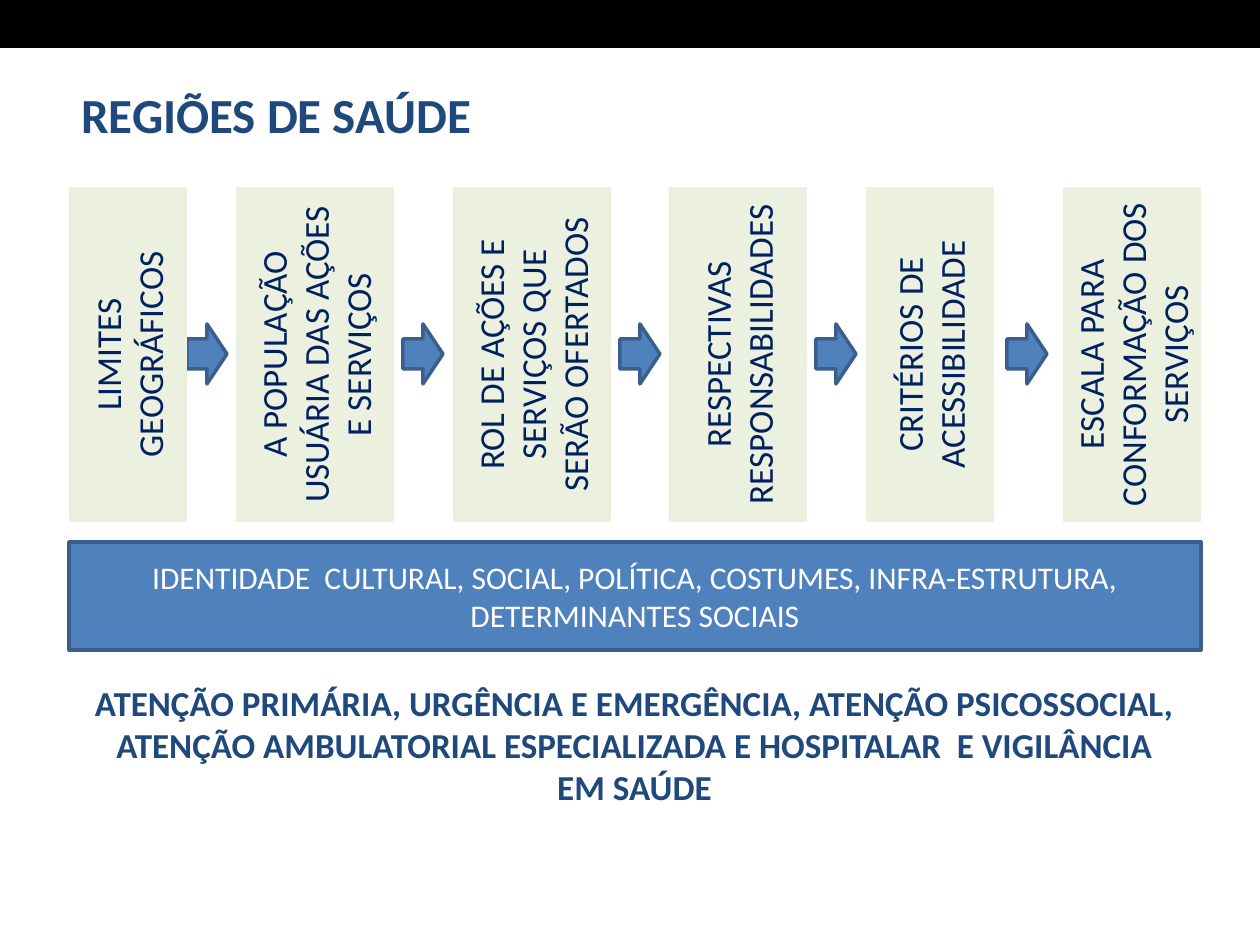
from pptx import Presentation
from pptx.dml.color import RGBColor
from pptx.enum.shapes import MSO_SHAPE as Shape
from pptx.enum.text import MSO_ANCHOR as Anchor, MSO_AUTO_SIZE as Fit, PP_ALIGN as Align
from pptx.util import Inches, Pt

BLACK = RGBColor(0x00, 0x00, 0x00)
WHITE = RGBColor(0xFF, 0xFF, 0xFF)
GREEN = RGBColor(0xEB, 0xF1, 0xDE)
BLUE = RGBColor(0x4F, 0x81, 0xBD)
EDGE = RGBColor(0x3A, 0x5F, 0x8C)
NAVY = RGBColor(0x00, 0x20, 0x60)
TITLE = RGBColor(0x1F, 0x49, 0x7D)

HEAD = "REGIÕES DE SAÚDE"
STEPS = [  # left, width, text
    (69, 118, "LIMITES GEOGRÁFICOS"),
    (236, 158, "A POPULAÇÃO USUÁRIA DAS AÇÕES E SERVIÇOS"),
    (453, 158, "ROL DE AÇÕES E SERVIÇOS QUE SERÃO OFERTADOS"),
    (669, 138, "RESPECTIVAS RESPONSABILIDADES"),
    (866, 128, "CRITÉRIOS DE ACESSIBILIDADE"),
    (1063, 138, "ESCALA PARA CONFORMAÇÃO DOS SERVIÇOS"),
]
ARROWS = [187, 403, 620, 816, 1007]
BASE = ("IDENTIDADE  CULTURAL, SOCIAL, POLÍTICA, COSTUMES, INFRA-ESTRUTURA, "
        "DETERMINANTES SOCIAIS")
CARE = ("ATENÇÃO PRIMÁRIA, URGÊNCIA E EMERGÊNCIA, ATENÇÃO PSICOSSOCIAL, "
        "ATENÇÃO AMBULATORIAL ESPECIALIZADA E HOSPITALAR  E VIGILÂNCIA EM SAÚDE")

LEFT, TOP, TALL = 69, 187, 335
SPAN = STEPS[-1][0] + STEPS[-1][1] - LEFT
ARROW_W, ARROW_H = 40, 60


def px(*vals):
    return [Inches(v / 126) for v in vals]


def write(shape, text, size, color, bold=False, align=Align.CENTER):
    frame = shape.text_frame
    frame.word_wrap = True
    frame.text = text
    par = frame.paragraphs[0]
    par.alignment = align
    font = par.runs[0].font
    font.name, font.size, font.bold = "Calibri", Pt(size), bold
    font.color.rgb = color
    return frame


def draw(kind, box, fill, line=None):
    shape = slide.shapes.add_shape(kind, *px(*box))
    shape.shadow.inherit = False
    shape.fill.solid()
    shape.fill.fore_color.rgb = fill
    if line is None:
        shape.line.fill.background()
    else:
        shape.line.color.rgb = line
        shape.line.width = Pt(2)
    return shape


def label(box, *style, **more):
    frame = write(slide.shapes.add_textbox(*px(*box)), *style, **more)
    frame.auto_size = Fit.SHAPE_TO_FIT_TEXT


deck = Presentation()
deck.slide_width, deck.slide_height = px(1260, 945)
slide = deck.slides.add_slide(deck.slide_layouts[6])

draw(Shape.RECTANGLE, (0, 0, 1260, 46), BLACK, BLACK)
label((LEFT, 78, 1152, 72), HEAD, 28, TITLE, bold=True, align=Align.JUSTIFY)

for x in ARROWS:
    y = TOP + (TALL - ARROW_H) // 2
    draw(Shape.RIGHT_ARROW, (x, y, ARROW_W, ARROW_H), BLUE, EDGE)

for x, wide, text in STEPS:
    step = draw(Shape.RECTANGLE, (x, TOP, wide, TALL), GREEN)
    frame = write(step, text, 20, NAVY)
    frame.vertical_anchor = Anchor.MIDDLE
    frame._txBody.bodyPr.set("vert", "vert270")

base = draw(Shape.RECTANGLE, (LEFT, 542, SPAN, 108), BLUE, EDGE)
write(base, BASE, 18, WHITE).vertical_anchor = Anchor.MIDDLE
label((78, 675, 1113, 140), CARE, 20, TITLE, bold=True)

deck.save("out.pptx")
